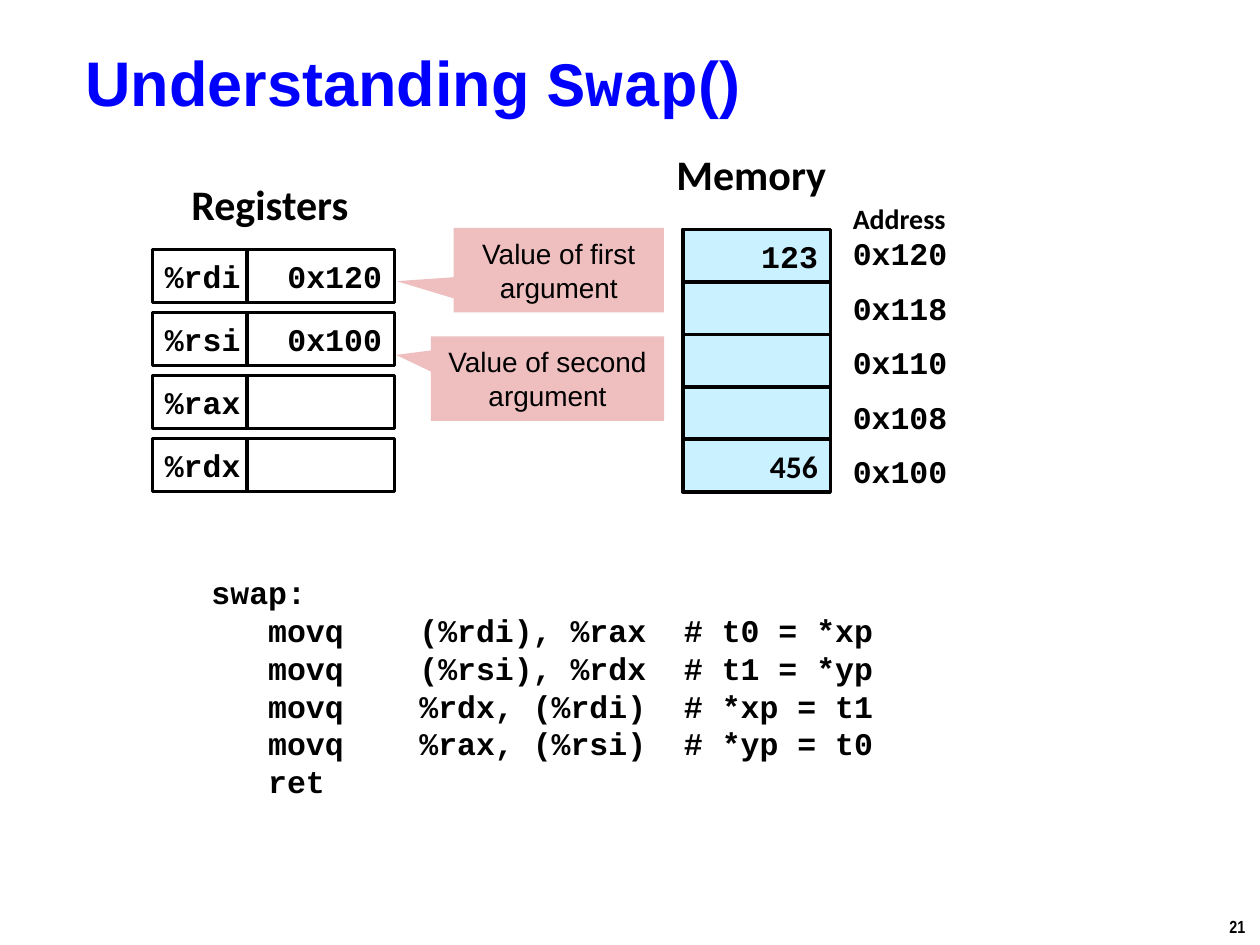
import dataclasses

import pptx
import pptx.dml.color
import pptx.enum.shapes
import pptx.enum.text
import pptx.oxml.ns
import pptx.util
from lxml import etree
from pptx.util import Inches

ALIGN = pptx.enum.text.PP_ALIGN
ANCHOR = pptx.enum.text.MSO_ANCHOR
SHAPE = pptx.enum.shapes.MSO_SHAPE


@dataclasses.dataclass(frozen=True)
class Theme:
    sans: str = "Arial"
    narrow: str = "Arial Narrow"
    label: str = "Calibri"
    code: str = "Courier New"
    black: str = "000000"
    white: str = "FFFFFF"
    title: str = "0000FF"
    memory: str = "C9F1FF"
    callout: str = "EFBFBF"
    title_size: int = 36
    heading_size: int = 24
    code_size: int = 18
    note_size: int = 16
    number_size: int = 10
    line_width: int = 2


THEME = Theme()
CELL_HEIGHT = 0.42
VALUE_WIDTH = 1.17


def rgb(color):
    return pptx.dml.color.RGBColor.from_string(color)


def set_font(font, name, size, bold=True, color=THEME.black):
    font.name = name
    font.size = pptx.util.Pt(size)
    font.bold = bold
    font.color.rgb = rgb(color)


def add_text(shapes, bounds, text, name, size, wrap=False):
    box = shapes.add_textbox(*map(Inches, bounds))
    box.text_frame.word_wrap = wrap
    box.text_frame.text = text
    for para in box.text_frame.paragraphs:
        set_font(para.font, name, size)
    return box


def add_filled_shape(shapes, kind, bounds, fill):
    shape = shapes.add_shape(kind, *map(Inches, bounds))
    shape.shadow.inherit = False
    shape.fill.solid()
    shape.fill.fore_color.rgb = rgb(fill)
    shape.text_frame.vertical_anchor = ANCHOR.MIDDLE
    return shape


def add_cell(shapes, bounds, text, fill, align, name=THEME.code):
    cell = add_filled_shape(shapes, SHAPE.RECTANGLE, bounds, fill)
    cell.line.color.rgb = rgb(THEME.black)
    cell.line.width = pptx.util.Pt(THEME.line_width)
    if text:
        cell.text_frame.word_wrap = False
        cell.text_frame.text = text
        para = cell.text_frame.paragraphs[0]
        para.alignment = align
        set_font(para.font, name, THEME.code_size)


def add_callout(shapes, bounds, text, pointer):
    callout = add_filled_shape(shapes, SHAPE.RECTANGULAR_CALLOUT, bounds, THEME.callout)
    callout.line.fill.background()
    callout.adjustments[0], callout.adjustments[1] = pointer
    callout.text_frame.word_wrap = True
    callout.text_frame.text = text
    para = callout.text_frame.paragraphs[0]
    para.alignment = ALIGN.CENTER
    set_font(para.font, THEME.sans, THEME.note_size, bold=False)


def add_title(shapes):
    box = shapes.add_textbox(Inches(0.58), Inches(0.33), Inches(6.97), Inches(0.63))
    box.text_frame.word_wrap = True
    box.text_frame.vertical_anchor = ANCHOR.MIDDLE
    para = box.text_frame.paragraphs[0]
    parts = (("Understanding ", THEME.sans), ("Swap", THEME.code), ("()", THEME.sans))
    for text, name in parts:
        span = para.add_run()
        span.text = text
        set_font(span.font, name, THEME.title_size, color=THEME.title)


def add_registers(shapes):
    add_text(shapes, (1.42, 1.37, 1.48, 0.5), "Registers", THEME.label, THEME.heading_size)
    group = shapes.add_group_shape().shapes
    registers = (("%rdi", "0x120"), ("%rsi", "0x100"), ("%rax", ""), ("%rdx", ""))
    for row, (register, value) in enumerate(registers):
        top = 1.98 + row * 0.5
        add_cell(group, (1.21, top, 0.75, CELL_HEIGHT), register, THEME.white, ALIGN.LEFT)
        add_cell(group, (1.96, top, VALUE_WIDTH, CELL_HEIGHT), value, THEME.white, ALIGN.RIGHT)


def add_memory(shapes):
    add_text(shapes, (5.27, 1.13, 1.4, 0.5), "Memory", THEME.label, THEME.heading_size)
    values = ("123", "", "", "", "456")
    for row, value in enumerate(values):
        name = THEME.label if row == len(values) - 1 else THEME.code
        bounds = (5.42, 1.82 + row * 0.4165, VALUE_WIDTH, CELL_HEIGHT)
        add_cell(shapes, bounds, value, THEME.memory, ALIGN.RIGHT, name)
    group = shapes.add_group_shape().shapes
    for row, address in enumerate(("0x120", "0x118", "0x110", "0x108", "0x100")):
        bounds = (6.67, 1.81 + row * 0.4325, 1.33, 0.4)
        add_text(group, bounds, address, THEME.code, THEME.code_size, wrap=True)
    add_text(group, (6.67, 1.55, 1.33, 0.37), "Address", THEME.label, THEME.note_size, wrap=True)


def set_tabs(para, stops):
    tabs = etree.Element(pptx.oxml.ns.qn("a:tabLst"))
    for stop in stops:
        etree.SubElement(tabs, pptx.oxml.ns.qn("a:tab"), pos=str(Inches(stop)), algn="l")
    para._p.get_or_add_pPr().insert(0, tabs)


def add_code(shapes):
    lines = (
        "swap:",
        "\tmovq\t(%rdi), %rax\t# t0 = *xp",
        "\tmovq\t(%rsi), %rdx\t# t1 = *yp",
        "\tmovq\t%rdx, (%rdi)\t# *xp = t1",
        "\tmovq\t%rax, (%rsi)\t# *yp = t0",
        "\tret",
    )
    box = add_text(shapes, (1.58, 4.5, 6.42, 1.92), "\n".join(lines),
                   THEME.code, THEME.code_size, wrap=True)
    for para in box.text_frame.paragraphs:
        set_tabs(para, (0.45, 1.65, 3.75))


def main():
    deck = pptx.Presentation()
    deck.slide_width, deck.slide_height = Inches(10), Inches(7.5)
    page = deck.slides.add_slide(deck.slide_layouts[6])
    shapes = page.shapes
    add_text(shapes, (9.66, 7.22, 0.34, 0.27), "21", THEME.narrow, THEME.number_size)
    add_title(shapes)
    add_registers(shapes)
    add_memory(shapes)
    add_code(shapes)
    add_callout(shapes, (3.6, 1.81, 1.67, 0.67), "Value of first argument", (-0.77, 0.13))
    add_callout(shapes, (3.42, 2.67, 1.85, 0.67), "Value of second argument", (-0.65, -0.28))
    deck.save("out.pptx")


if __name__ == "__main__":
    main()
